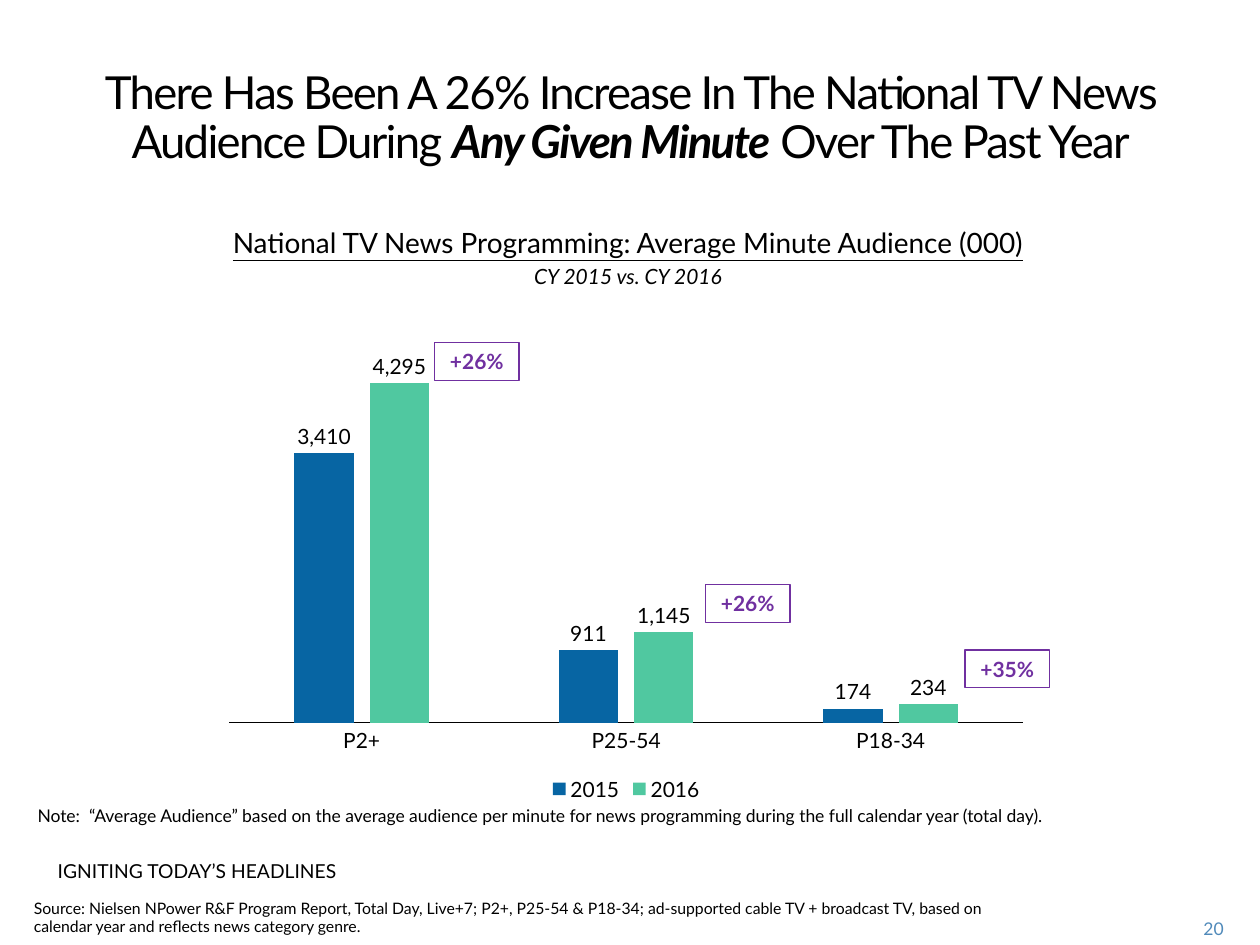
from dataclasses import dataclass

from pptx import Presentation
from pptx.chart.data import CategoryChartData
from pptx.dml.color import RGBColor
from pptx.enum import chart as charts, shapes, text
from pptx.util import Inches, Pt


@dataclass(frozen=True)
class Theme:
    """Colours, font and type sizes of the slide."""
    font: str = "Lato"
    ink: str = "000000"
    accent: str = "7030A0"
    page: str = "508ABA"
    series: tuple = ("0765A3", "50C8A0")
    title: int = 26
    heading: int = 16
    label: int = 12
    tagline: int = 11
    note: int = 10
    source: int = 9


THEME = Theme()


def style_font(font, size, color=THEME.ink, bold=False, italic=False, underline=False):
    """Set the theme font with the given format."""
    font.name, font.size = THEME.font, Pt(size)
    font.bold, font.italic, font.underline = bold, italic, underline
    font.color.rgb = RGBColor.from_string(color)


def add_run(paragraph, words, size, spacing=0, **style):
    """Append formatted words to a paragraph."""
    run = paragraph.add_run()
    run.text = words
    style_font(run.font, size, **style)
    if spacing:
        run._r.get_or_add_rPr().set("spc", str(int(spacing * 100)))


def add_text_box(slide, box, words="", size=THEME.note, align=text.PP_ALIGN.LEFT, **style):
    """Add a wrapping text box and return its text frame."""
    frame = slide.shapes.add_textbox(*map(Inches, box)).text_frame
    frame.word_wrap = True
    frame.paragraphs[0].alignment = align
    if words:
        add_run(frame.paragraphs[0], words, size, **style)
    return frame


def add_title(slide, box):
    """Add the headline with its emphasised phrase."""
    paragraph = add_text_box(slide, box, align=text.PP_ALIGN.CENTER).paragraphs[0]
    paragraph.line_spacing = Pt(28)
    for words, strong in (
        ("There Has Been A 26% Increase In The National TV News Audience During ", False),
        ("Any Given Minute", True),
        (" Over The Past Year", False),
    ):
        add_run(paragraph, words, THEME.title, spacing=-1, bold=strong, italic=strong)


def add_chart_heading(slide, box):
    """Add the underlined chart heading and the period below it."""
    frame = add_text_box(
        slide, box, "National TV News Programming: Average Minute Audience (000)",
        THEME.heading, text.PP_ALIGN.CENTER, underline=True)
    paragraph = frame.add_paragraph()
    paragraph.alignment = text.PP_ALIGN.CENTER
    paragraph.space_before = Pt(0.2 * THEME.label)
    add_run(paragraph, "CY 2015 vs. CY 2016", THEME.label, italic=True)


def add_audience_chart(slide, box):
    """Add the clustered columns that compare both years."""
    data = CategoryChartData(number_format="#,##0")
    data.categories = ["P2+", "P25-54", "P18-34"]
    data.add_series("2015", (3410, 911, 174))
    data.add_series("2016", (4295, 1145, 234))
    chart = slide.shapes.add_chart(
        charts.XL_CHART_TYPE.COLUMN_CLUSTERED, *map(Inches, box), data).chart
    style_font(chart.font, THEME.note)
    chart.has_title = False
    chart.has_legend = True
    chart.legend.position = charts.XL_LEGEND_POSITION.BOTTOM
    chart.legend.include_in_layout = False
    style_font(chart.legend.font, THEME.label)

    value_axis = chart.value_axis
    value_axis.minimum_scale, value_axis.maximum_scale = 0, 5000
    value_axis.has_major_gridlines = False
    value_axis.visible = False
    category_axis = chart.category_axis
    category_axis.major_tick_mark = charts.XL_TICK_MARK.NONE
    style_font(category_axis.tick_labels.font, THEME.label)
    category_axis.format.line.color.rgb = RGBColor.from_string(THEME.ink)
    category_axis.format.line.width = Pt(0.75)

    plot = chart.plots[0]
    plot.gap_width, plot.overlap = 219, -27
    plot.vary_by_categories = False
    for series, color in zip(plot.series, THEME.series):
        series.format.fill.solid()
        series.format.fill.fore_color.rgb = RGBColor.from_string(color)
        series.invert_if_negative = False
        labels = series.data_labels
        labels.show_value = True
        labels.position = charts.XL_LABEL_POSITION.OUTSIDE_END
        labels.number_format, labels.number_format_is_linked = "#,##0", False
        style_font(labels.font, THEME.label)


def add_growth_callout(slide, box, words):
    """Add an outlined box with a growth rate."""
    shape = slide.shapes.add_shape(shapes.MSO_SHAPE.RECTANGLE, *map(Inches, box))
    shape.shadow.inherit = False
    shape.fill.background()
    shape.line.color.rgb = RGBColor.from_string(THEME.accent)
    shape.line.width = Pt(0.75)
    frame = shape.text_frame
    frame.word_wrap = True
    frame.vertical_anchor = text.MSO_ANCHOR.MIDDLE
    frame.paragraphs[0].alignment = text.PP_ALIGN.CENTER
    add_run(frame.paragraphs[0], words, THEME.label, color=THEME.accent, bold=True)


def add_footer(slide):
    """Add the note, tagline, source and page number."""
    add_text_box(
        slide, (0.2, 6.34, 9.63, 0.21),
        "Note:  “Average Audience” based on the average audience per minute for news "
        "programming during the full calendar year (total day).")
    add_text_box(slide, (0.36, 6.77, 2.72, 0.47), "IGNITING TODAY’S HEADLINES", THEME.tagline)
    add_text_box(
        slide, (0.17, 7.08, 7.9, 0.35),
        "Source: Nielsen NPower R&F Program Report, Total Day, Live+7; P2+, P25-54 & P18-34; "
        "ad-supported cable TV + broadcast TV, based on calendar year and reflects news "
        "category genre.", THEME.source)
    add_text_box(
        slide, (9.2, 7.24, 0.61, 0.25), "20", align=text.PP_ALIGN.RIGHT, color=THEME.page)


def main():
    """Build and save the presentation."""
    presentation = Presentation()
    presentation.slide_width, presentation.slide_height = Inches(10), Inches(7.5)
    slide = presentation.slides.add_slide(presentation.slide_layouts[6])
    add_title(slide, (0.06, 0.5, 9.89, 0.68))
    add_chart_heading(slide, (0.17, 1.74, 9.63, 0.4))
    add_audience_chart(slide, (1.69, 2.52, 6.56, 3.88))
    for left, top, words in ((3.45, 2.72, "+26%"), (5.6, 4.64, "+26%"), (7.66, 5.16, "+35%")):
        add_growth_callout(slide, (left, top, 0.67, 0.3), words)
    add_footer(slide)
    presentation.save("out.pptx")


if __name__ == "__main__":
    main()
